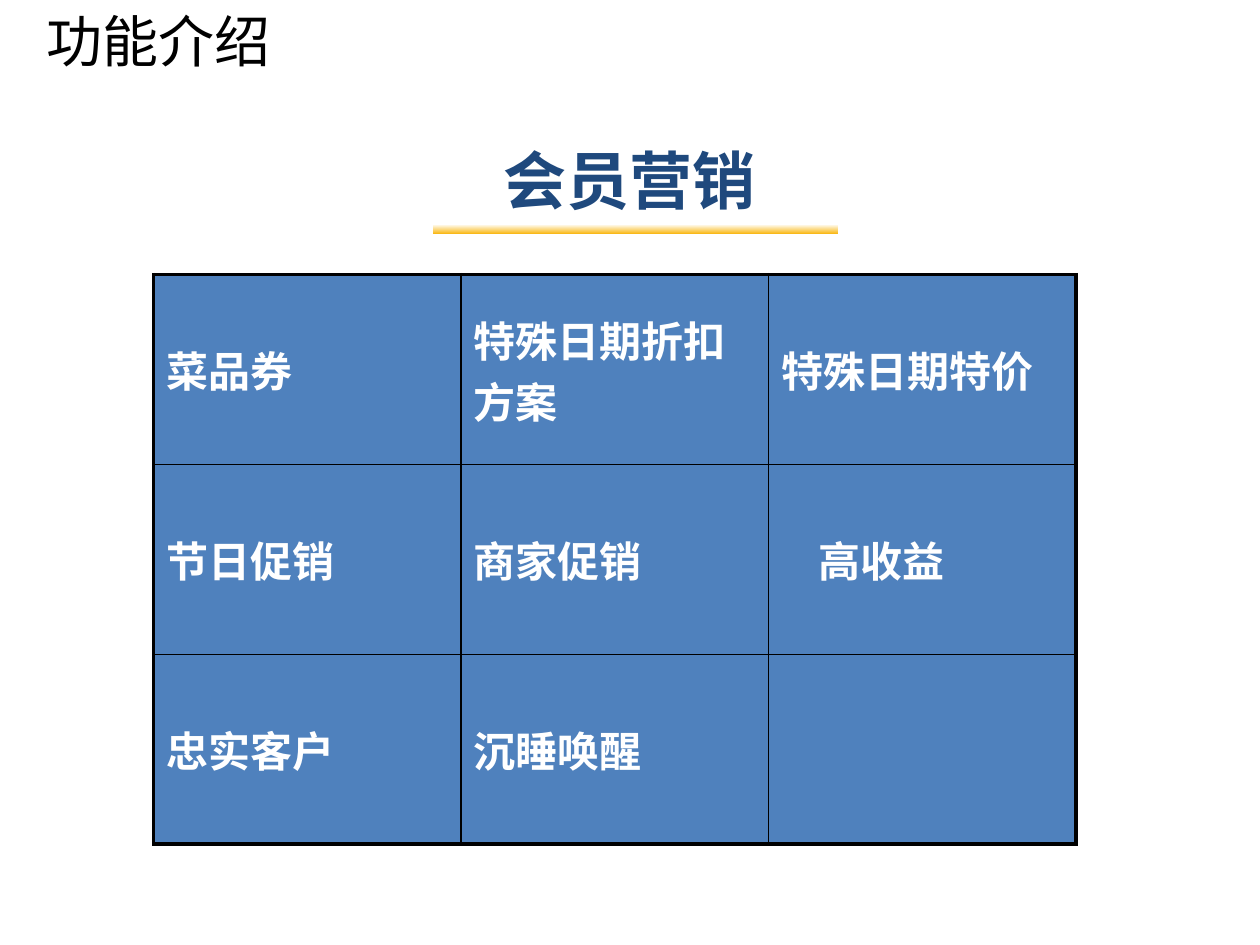
from lxml.etree import SubElement
from pptx import Presentation
from pptx.dml.color import RGBColor
from pptx.enum.shapes import MSO_SHAPE
from pptx.enum.text import MSO_ANCHOR, MSO_AUTO_SIZE, PP_ALIGN
from pptx.oxml import parse_xml
from pptx.oxml.ns import nsdecls, qn
from pptx.util import Inches, Pt

COLORS = {"black": "000000", "white": "FFFFFF", "navy": "1F497D",
          "blue": "4F81BD", "gold": "F9B407"}
FEATURES = [["菜品券", "特殊日期折扣方案", "特殊日期特价"],
            ["节日促销", "商家促销", "高收益"],
            ["忠实客户", "沉睡唤醒", ""]]
INDENTED = "高收益"
THIN, THICK = 1, 2.25


def color(name):
    """Return the named palette colour."""
    return RGBColor.from_string(COLORS[name])


def write(frame, text, *, size, ink, font="Calibri", bold=False, align=PP_ALIGN.LEFT):
    """Put one formatted paragraph in a text frame."""
    frame.word_wrap = True
    para = frame.paragraphs[0]
    para.alignment = align
    span = para.add_run()
    span.text = text
    span.font.name = font
    span.font.size = Pt(size)
    span.font.bold = bold
    span.font.color.rgb = color(ink)


def place_title(page, left, top, width, height):
    """Place the page title in its placeholder."""
    title = page.shapes.title
    title.left, title.top, title.width, title.height = map(Inches, (left, top, width, height))
    frame = title.text_frame
    frame.auto_size = MSO_AUTO_SIZE.NONE
    frame.vertical_anchor = MSO_ANCHOR.TOP
    write(frame, "功能介绍", size=32, ink="black")


def add_heading(page, left, top, width, height):
    """Add the section heading with a gradient bar under it."""
    box = page.shapes.add_textbox(*map(Inches, (left, top, width, height)))
    box.text_frame.vertical_anchor = MSO_ANCHOR.MIDDLE
    write(box.text_frame, "会员营销", size=36, ink="navy", bold=True, align=PP_ALIGN.CENTER)
    bar = page.shapes.add_shape(MSO_SHAPE.RECTANGLE, Inches(left + 2.68),
                                Inches(top + 0.88), Inches(3.23), Inches(0.08))
    bar.shadow.inherit = False
    bar.fill.gradient()
    bar.fill.gradient_angle = 270
    for stop, name, position in zip(bar.fill.gradient_stops, ("white", "gold"), (0, 1)):
        stop.color.rgb = color(name)
        stop.position = position
    bar.line.color.rgb = color("white")
    bar.line.width = Pt(0.75)


def set_borders(cell, widths):
    """Draw black cell borders from widths keyed by side."""
    properties = cell._tc.get_or_add_tcPr()
    for index, side in enumerate("LRTB"):
        line = parse_xml(f'<a:ln{side} {nsdecls("a")} w="{Pt(widths[side])}"/>')
        fill = SubElement(line, qn("a:solidFill"))
        SubElement(fill, qn("a:srgbClr"), val=COLORS["black"])
        properties.insert(index, line)


def add_feature_table(page, left, top, width, height):
    """Add the feature grid with a thick outer frame."""
    rows, columns = len(FEATURES), len(FEATURES[0])
    table = page.shapes.add_table(rows, columns, *map(Inches, (left, top, width, height))).table
    table.first_row = table.horz_banding = False
    for row, labels in enumerate(FEATURES):
        for column, label in enumerate(labels):
            cell = table.cell(row, column)
            cell.fill.solid()
            cell.fill.fore_color.rgb = color("blue")
            cell.vertical_anchor = MSO_ANCHOR.MIDDLE
            cell.margin_left = Inches(0.4 if label == INDENTED else 0.1)
            outer = {"L": column == 0, "R": column == columns - 1,
                     "T": row == 0, "B": row == rows - 1}
            set_borders(cell, {side: THICK if edge else THIN for side, edge in outer.items()})
            if label:
                write(cell.text_frame, label, size=24, ink="white", font="Arial", bold=True)


def main():
    """Build and save the deck."""
    deck = Presentation()
    deck.slide_width, deck.slide_height = Inches(10), Inches(7.5)
    page = deck.slides.add_slide(deck.slide_layouts[5])
    page.background.fill.solid()
    page.background.fill.fore_color.rgb = color("white")
    place_title(page, 0.27, 0, 9, 0.68)
    add_heading(page, 0.75, 0.9, 8.5, 1.04)
    add_feature_table(page, 1.22, 2.18, 7.32, 4.52)
    deck.save("out.pptx")


if __name__ == "__main__":
    main()
